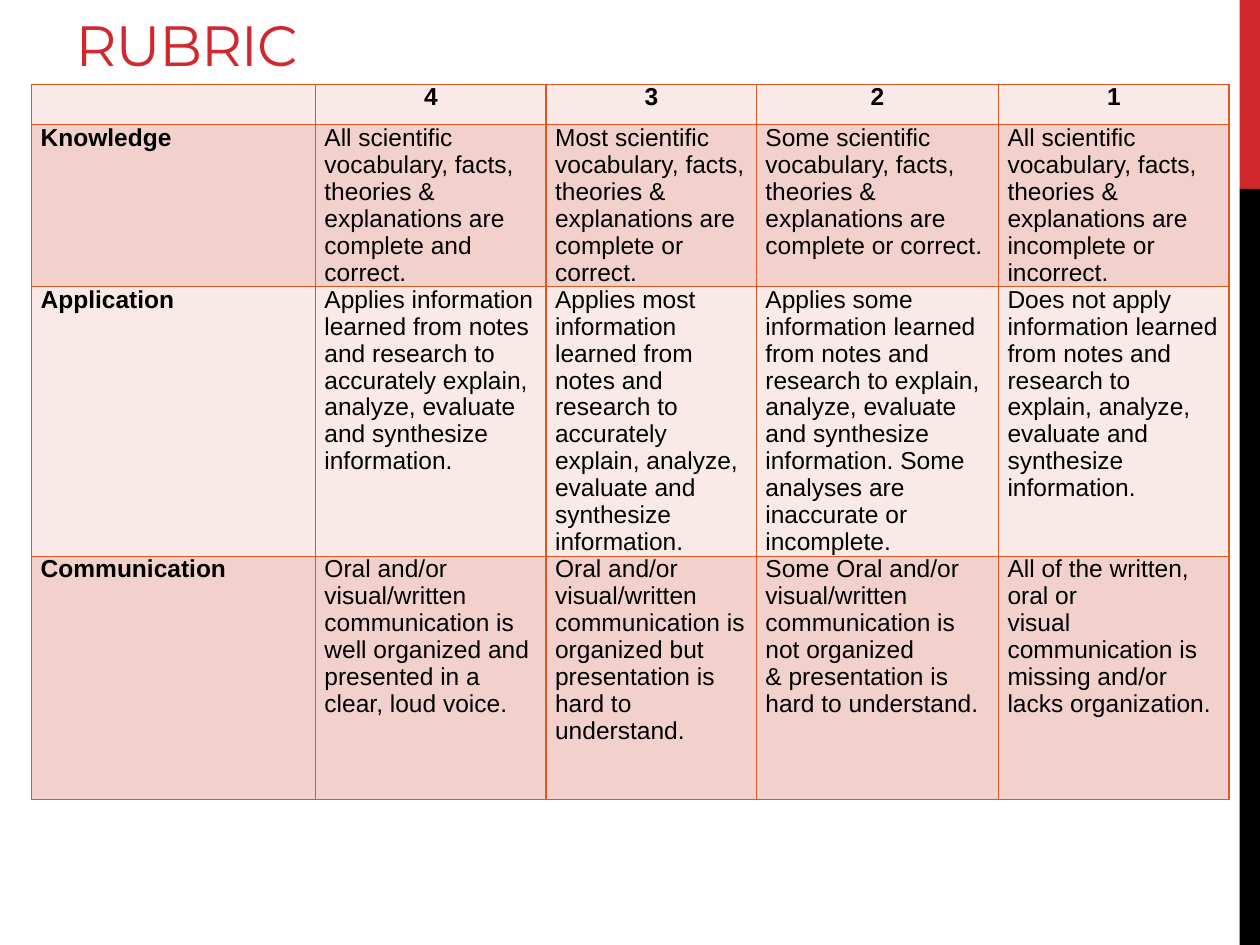
from lxml.etree import SubElement
from pptx import Presentation
from pptx.dml.color import RGBColor
from pptx.enum.shapes import MSO_SHAPE as Shape
from pptx.enum.text import MSO_ANCHOR as Anchor, MSO_AUTO_SIZE as AutoSize, PP_ALIGN as Align
from pptx.oxml.ns import qn
from pptx.util import Cm, Pt

RED = RGBColor(0xD1, 0x28, 0x2E)
BLACK = RGBColor(0, 0, 0)
BORDER = RGBColor(0xDC, 0x59, 0x24)
BANDS = [RGBColor(0xF9, 0xEA, 0xE8), RGBColor(0xF2, 0xD1, 0xCD)]

TITLE = "RUBRIC"
RUBRIC = [
    ["", "4", "3", "2", "1"],
    [
        "Knowledge",
        "All scientific vocabulary, facts, theories & explanations are complete and correct.",
        "Most scientific vocabulary, facts, theories & explanations are complete or correct.",
        "Some scientific vocabulary, facts, theories & explanations are complete or correct.",
        "All scientific vocabulary, facts, theories & explanations are incomplete or incorrect.",
    ],
    [
        "Application",
        "Applies information learned from notes and research to accurately explain, "
        "analyze, evaluate and synthesize information.",
        "Applies most information learned from notes and research to accurately explain, "
        "analyze, evaluate and synthesize information.",
        "Applies some information learned from notes and research to explain, analyze, "
        "evaluate and synthesize information. Some analyses are inaccurate or incomplete.",
        "Does not apply information learned from notes and research to explain, analyze, "
        "evaluate and synthesize information.",
    ],
    [
        "Communication",
        "Oral and/or visual/written\n"
        "communication is well organized and presented in a clear, loud voice.",
        "Oral and/or visual/written\n"
        "communication is organized but presentation is hard to understand.",
        "Some Oral and/or visual/written\ncommunication is not organized\n"
        "& presentation is hard to understand.",
        "All of the written, oral or\n"
        "visual communication is missing and/or lacks organization.",
    ],
]
COLUMN_WIDTHS = [5.72, 4.65, 4.24, 4.88, 4.65]
ROW_HEIGHTS = [0.81, 3.2, 4.88, 4.9]
SIDE_BARS = [(0, 3.81, RED), (3.81, 15.24, BLACK)]  # top, height, colour


def write(frame, text, font="Arial", size=14, color=BLACK, bold=False,
          align=Align.LEFT, line_spacing=0.98, tracking=None):
    """Fill a text frame, one paragraph for each line of text."""
    for index, line in enumerate(text.split("\n")):
        paragraph = frame.add_paragraph() if index else frame.paragraphs[0]
        paragraph.alignment = align
        paragraph.line_spacing = line_spacing
        run = paragraph.add_run()
        run.text = line
        run.font.name = font
        run.font.size = Pt(size)
        run.font.bold = bold
        run.font.color.rgb = color
        if tracking is not None:
            run.font._element.set("spc", str(round(tracking * 100)))


def add_borders(cell, color, width):
    properties = cell._tc.get_or_add_tcPr()
    for position, side in enumerate(("a:lnL", "a:lnR", "a:lnT", "a:lnB")):
        line = properties.makeelement(qn(side), {"w": str(Pt(width))})
        properties.insert(position, line)
        fill = SubElement(line, qn("a:solidFill"))
        SubElement(fill, qn("a:srgbClr"), val=str(color))


def add_side_bars(slide):
    for top, height, color in SIDE_BARS:
        bar = slide.shapes.add_shape(Shape.RECTANGLE, Cm(24.99), Cm(top), Cm(0.41), Cm(height))
        bar.shadow.inherit = False
        bar.fill.solid()
        bar.fill.fore_color.rgb = color
        bar.line.fill.background()


def add_title(slide):
    title = slide.shapes.title
    title.left, title.top, title.width, title.height = Cm(1.27), Cm(0.43), Cm(21.16), Cm(1.27)
    frame = title.text_frame
    frame.auto_size = AutoSize.NONE
    frame.vertical_anchor = Anchor.BOTTOM
    write(frame, TITLE, font="Montserrat", size=32.4, color=RED,
          line_spacing=1.0, tracking=-0.6)


def add_rubric(slide):
    table = slide.shapes.add_table(
        len(RUBRIC), len(COLUMN_WIDTHS), Cm(0.64), Cm(1.7),
        Cm(sum(COLUMN_WIDTHS)), Cm(sum(ROW_HEIGHTS))).table
    table.first_row = table.horz_banding = False
    for column, width in zip(table.columns, COLUMN_WIDTHS):
        column.width = Cm(width)
    for row, height in zip(table.rows, ROW_HEIGHTS):
        row.height = Cm(height)

    for row_index, levels in enumerate(RUBRIC):
        for column_index, text in enumerate(levels):
            cell = table.cell(row_index, column_index)
            cell.margin_left = cell.margin_right = Cm(0.18)
            cell.margin_top = cell.margin_bottom = 0
            cell.fill.solid()
            cell.fill.fore_color.rgb = BANDS[row_index % 2]
            add_borders(cell, BORDER, 1)
            is_header = row_index == 0
            write(cell.text_frame, text, bold=is_header or column_index == 0,
                  align=Align.CENTER if is_header else Align.LEFT)


def main():
    deck = Presentation()
    deck.slide_width, deck.slide_height = Cm(25.4), Cm(19.05)
    slide = deck.slides.add_slide(deck.slide_layouts.get_by_name("Title Only"))
    add_side_bars(slide)
    add_title(slide)
    add_rubric(slide)
    deck.save("out.pptx")


if __name__ == "__main__":
    main()
